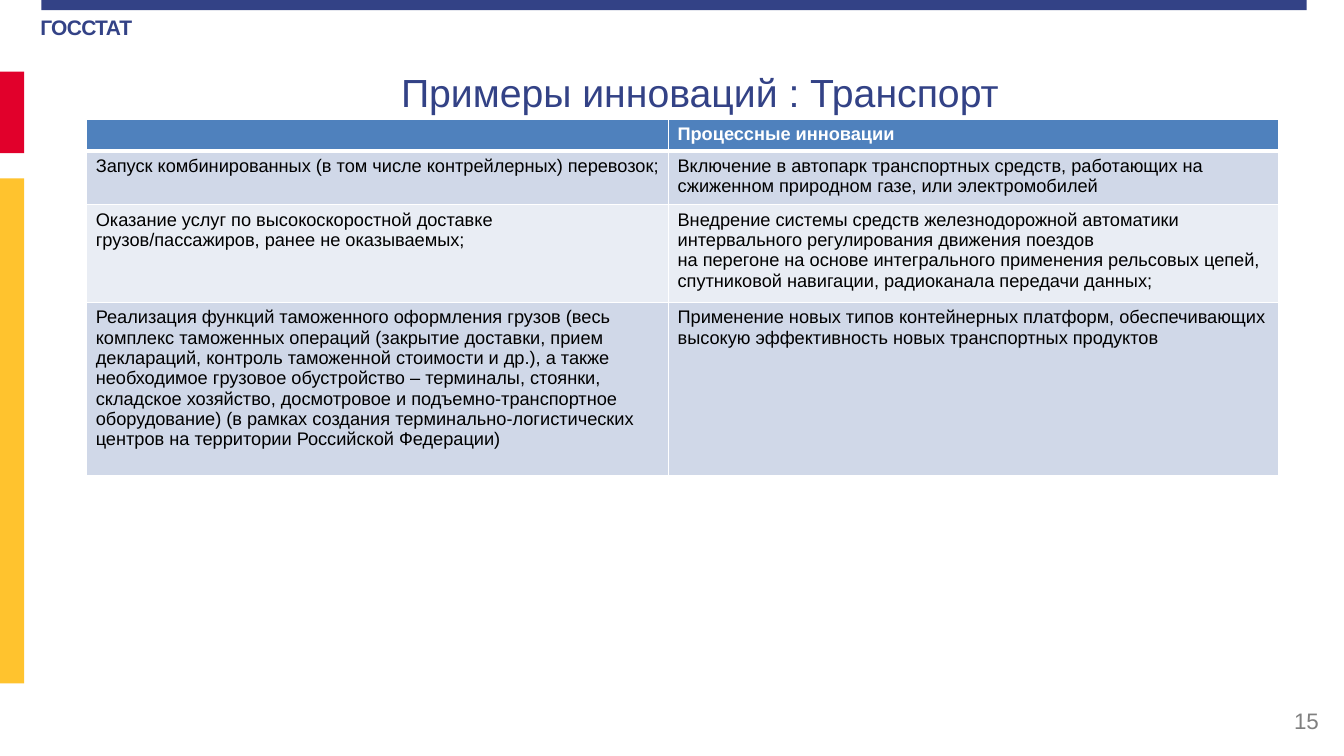
from dataclasses import dataclass

from lxml.etree import SubElement
from pptx import Presentation
from pptx.dml.color import RGBColor
from pptx.enum.shapes import MSO_SHAPE
from pptx.enum.text import MSO_ANCHOR, MSO_AUTO_SIZE, PP_ALIGN
from pptx.oxml.ns import qn
from pptx.util import Inches, Pt

WIDTH, HEIGHT = Inches(13.33), Inches(7.5)
FONT = "Arial"
COLORS = {
    "navy": "334286", "red": "E1002B", "yellow": "FFC32E", "gray": "808080",
    "header": "4F81BD", "band": "D0D8E8", "pale": "E9EDF4",
    "white": "FFFFFF", "black": "000000",
}


@dataclass(frozen=True)
class Box:
    """Left, top, width and height in percent of the slide's size."""
    x: float
    y: float
    w: float
    h: float

    def emu(self) -> tuple[int, int, int, int]:
        return across(self.x), down(self.y), across(self.w), down(self.h)


@dataclass(frozen=True)
class Bar:
    box: Box
    color: str


@dataclass(frozen=True)
class Row:
    height: float
    fill: str
    texts: tuple[str, str]


BARS = [
    Bar(Box(3.08, 0, 94.15, 1.33), "navy"),
    Bar(Box(0, 9.47, 1.8, 10.8), "red"),
    Bar(Box(0, 23.6, 1.8, 66.8), "yellow"),
]
AGENCY = Box(3, 1.73, 8.63, 4.27)
NUMBER = Box(76.37, 92.67, 22.5, 5.33)
TITLE = Box(8.18, 7.87, 87.77, 13.6)
TABLE = Box(6.45, 15.73, 88.68, 46.4)
COLUMNS = (43.29, 45.39)
ROWS = [
    Row(4, "header", ("", "Процессные инновации")),
    Row(6.67, "band", (
        "Запуск комбинированных (в том числе контрейлерных) перевозок;",
        "Включение в автопарк транспортных средств, работающих на "
        "сжиженном природном газе, или электромобилей")),
    Row(12.8, "pale", (
        "Оказание услуг по высокоскоростной доставке грузов/пассажиров, "
        "ранее не оказываемых;",
        "Внедрение системы средств железнодорожной автоматики "
        "интервального регулирования движения поездов \v"
        "на перегоне на основе интегрального применения рельсовых цепей, "
        "спутниковой навигации, радиоканала передачи данных;")),
    Row(22.93, "band", (
        "Реализация функций таможенного оформления грузов (весь комплекс "
        "таможенных операций (закрытие доставки, прием деклараций, контроль "
        "таможенной стоимости и др.), а также необходимое грузовое "
        "обустройство – терминалы, стоянки, складское хозяйство, досмотровое "
        "и подъемно-транспортное оборудование) (в рамках создания "
        "терминально-логистических центров на территории Российской Федерации)",
        "Применение новых типов контейнерных платформ, обеспечивающих "
        "высокую эффективность новых транспортных продуктов")),
]


def across(share: float) -> int:
    return round(WIDTH * share / 100)


def down(share: float) -> int:
    return round(HEIGHT * share / 100)


def rgb(name: str) -> RGBColor:
    return RGBColor.from_string(COLORS[name])


def write(tf, text: str, *, size: float, color: str, bold: bool = False,
          align=PP_ALIGN.LEFT, anchor=MSO_ANCHOR.TOP, spacing: float = 0) -> None:
    tf.word_wrap = True
    tf.vertical_anchor = anchor
    p = tf.paragraphs[0]
    p.text = text
    p.alignment = align
    for r in p.runs:
        r.font.name, r.font.size, r.font.bold = FONT, Pt(size), bold
        r.font.color.rgb = rgb(color)
        if spacing:
            r.font._element.set("spc", str(round(spacing * 100)))
    if not text:
        SubElement(p._p, qn("a:endParaRPr"), sz=str(round(size * 100)))


def add_bar(s, bar: Bar) -> None:
    sp = s.shapes.add_shape(MSO_SHAPE.RECTANGLE, *bar.box.emu())
    sp.shadow.inherit = False
    sp.fill.solid()
    sp.fill.fore_color.rgb = rgb(bar.color)
    sp.line.fill.background()


def set_borders(cell, bottom: float) -> None:
    """Draw white cell borders, 1 pt except at the bottom."""
    tc_pr = cell._tc.get_or_add_tcPr()
    for i, (side, width) in enumerate(zip("LRTB", (1, 1, 1, bottom))):
        ln = SubElement(tc_pr, qn(f"a:ln{side}"), w=str(Pt(width)))
        SubElement(SubElement(ln, qn("a:solidFill")), qn("a:srgbClr"),
                   val=COLORS["white"])
        tc_pr.insert(i, ln)


def add_innovations(s) -> None:
    table = s.shapes.add_table(len(ROWS), len(COLUMNS), *TABLE.emu()).table
    table.horz_banding = False
    for column, width in zip(table.columns, COLUMNS):
        column.width = across(width)
    for i, row in enumerate(ROWS):
        table.rows[i].height = down(row.height)
        is_header = i == 0
        for j, text in enumerate(row.texts):
            cell = table.cell(i, j)
            cell.margin_left = cell.margin_right = across(0.68)
            cell.fill.solid()
            cell.fill.fore_color.rgb = rgb(row.fill)
            set_borders(cell, 3 if is_header else 1)
            write(cell.text_frame, text, size=13, bold=is_header,
                  color="white" if is_header else "black")


def main() -> None:
    prs = Presentation()
    prs.slide_width, prs.slide_height = WIDTH, HEIGHT
    s = prs.slides.add_slide(prs.slide_layouts[5])

    for bar in BARS:
        add_bar(s, bar)

    tf = s.shapes.add_textbox(*AGENCY.emu()).text_frame
    tf.margin_left = tf.margin_right = tf.margin_bottom = 0
    tf.margin_top = down(0.2)
    write(tf, "ГОССТАТ", size=15, color="navy", bold=True, spacing=-0.5)

    tf = s.shapes.add_textbox(*NUMBER.emu()).text_frame
    write(tf, "15", size=16, color="gray", align=PP_ALIGN.RIGHT,
          anchor=MSO_ANCHOR.MIDDLE)

    title = s.shapes.title
    title.left, title.top, title.width, title.height = TITLE.emu()
    tf = title.text_frame
    tf.auto_size = MSO_AUTO_SIZE.NONE
    tf.margin_top = down(1.2)
    write(tf, "Примеры инноваций : Транспорт", size=28, color="navy",
          align=PP_ALIGN.CENTER)

    add_innovations(s)
    prs.save("out.pptx")


if __name__ == "__main__":
    main()
